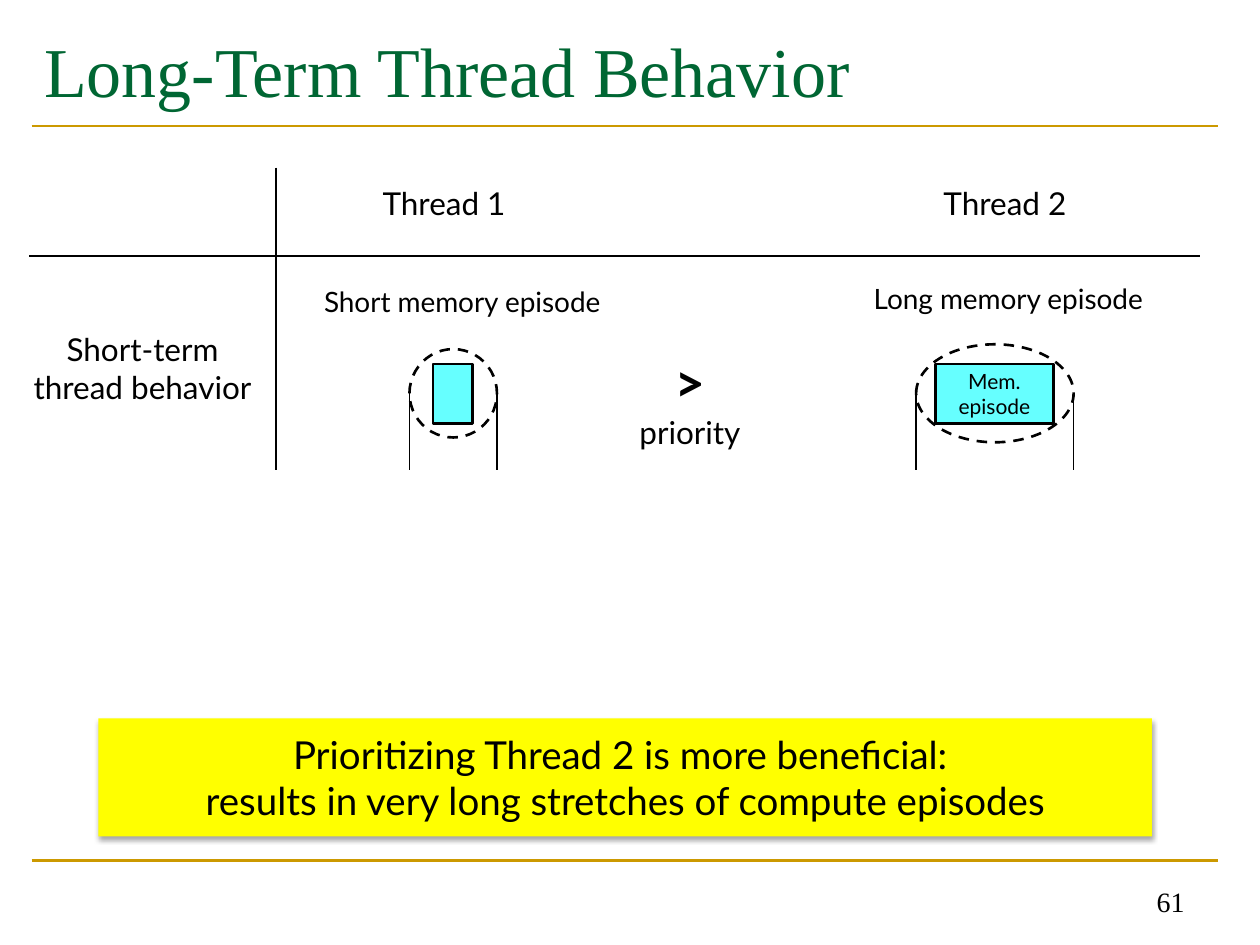
from lxml import etree
from pptx import Presentation
from pptx.dml.color import RGBColor
from pptx.enum.dml import MSO_LINE
from pptx.enum.shapes import MSO_CONNECTOR, MSO_SHAPE
from pptx.enum.text import MSO_ANCHOR, PP_ALIGN
from pptx.oxml import parse_xml
from pptx.oxml.ns import nsdecls, qn
from pptx.util import Pt

COLORS = {name: RGBColor.from_string(value) for name, value in {
    "black": "000000", "green": "006633", "gold": "CC9900",
    "cyan": "66FFFF", "yellow": "FFFF00"}.items()}
BODY_FONT, TITLE_FONT = "Lato", "Times New Roman"

presentation = Presentation()
presentation.slide_width, presentation.slide_height = Pt(720), Pt(540)
slide = presentation.slides.add_slide(presentation.slide_layouts[5])


def write(shape, text, size, font=BODY_FONT, color="black",
          align=PP_ALIGN.CENTER, anchor=MSO_ANCHOR.TOP):
    frame = shape.text_frame
    frame.word_wrap = True
    frame.vertical_anchor = anchor
    frame.text = text
    for paragraph in frame.paragraphs:
        paragraph.alignment = align
        for run in paragraph.runs:
            run.font.name, run.font.size = font, Pt(size)
            run.font.color.rgb = COLORS[color]


def add_block(kind, box, fill=None, outline=None):
    shape = slide.shapes.add_shape(kind, *map(Pt, box))
    shape.shadow.inherit = False
    if fill:
        shape.fill.solid()
        shape.fill.fore_color.rgb = COLORS[fill]
    else:
        shape.fill.background()
    if outline:
        shape.line.color.rgb = COLORS[outline]
        shape.line.width = Pt(1.5)
    else:
        shape.line.fill.background()
    return shape


title = slide.shapes.title
title.left, title.top, title.width, title.height = map(Pt, (18, 12.24, 678, 84))
write(title, "Long-Term Thread Behavior", 40, TITLE_FONT, "green", PP_ALIGN.LEFT)

grid_bottom = 268.5
lines = [
    (18, 72, 696, 72, "gold", 1.5),
    (18, 491.75, 696, 491.75, "gold", 1.5),
    (16.8, 146.2, 686, 146.2, "black", 1),
    (157.7, 95.8, 157.7, grid_bottom, "black", 1),
]
lines += [(x, 224.6, x, grid_bottom, "black", 1) for x in (234, 284, 523.5, 613.5)]
for x1, y1, x2, y2, color, width in lines:
    line = slide.shapes.add_connector(MSO_CONNECTOR.STRAIGHT, *map(Pt, (x1, y1, x2, y2)))
    line.line.color.rgb = COLORS[color]
    line.line.width = Pt(width)
    etree.SubElement(line._element.spPr, qn("a:effectLst"))

add_block(MSO_SHAPE.RECTANGLE, (247.5, 208, 22.5, 34), "cyan", "black")
long_episode = add_block(MSO_SHAPE.RECTANGLE, (534.5, 208, 67.5, 34), "cyan", "black")
write(long_episode, "Mem.\vepisode", 12, anchor=MSO_ANCHOR.MIDDLE)

for box in ((234, 199.5, 50, 50.5), (523.5, 196.75, 90, 56)):
    ellipse = add_block(MSO_SHAPE.OVAL, box, outline="black")
    ellipse.line.dash_style = MSO_LINE.DASH

labels = [
    ("Thread 1", 203, 101.5, 101.5, 29.5, 18),
    ("Thread 2", 523.5, 101.5, 101.5, 29.5, 18),
    ("Short-term\vthread behavior", 0, 185, 163, 52, 18),
    ("Short memory episode", 163, 159, 202.5, 27, 16),
    ("Long memory episode", 478, 157.5, 196.5, 27, 16),
    (">\npriority", 343.5, 196.5, 101.5, 65.5, 18),
]
for text, left, top, width, height, size in labels:
    label = slide.shapes.add_textbox(*map(Pt, (left, top, width, height)))
    write(label, text, size)
    if text.startswith(">"):
        sign = label.text_frame.paragraphs[0].runs[0].font
        sign.size, sign.bold = Pt(30), True

banner = add_block(MSO_SHAPE.RECTANGLE, (56.25, 410.5, 602, 67.5), "yellow")
write(banner, "Prioritizing Thread 2 is more beneficial: \n"
      "results in very long stretches of compute episodes", 22, anchor=MSO_ANCHOR.MIDDLE)
banner._element.spPr.find(qn("a:effectLst")).append(parse_xml(
    f'<a:outerShdw {nsdecls("a")} blurRad="{Pt(3.1)}" dist="{Pt(1.8)}" dir="5400000" '
    'rotWithShape="0"><a:srgbClr val="000000"><a:alpha val="35000"/></a:srgbClr></a:outerShdw>'))

page_number = slide.shapes.add_textbox(Pt(516), Pt(492), Pt(168), Pt(36))
write(page_number, "61", 16, TITLE_FONT, align=PP_ALIGN.RIGHT, anchor=MSO_ANCHOR.BOTTOM)

presentation.save("out.pptx")
